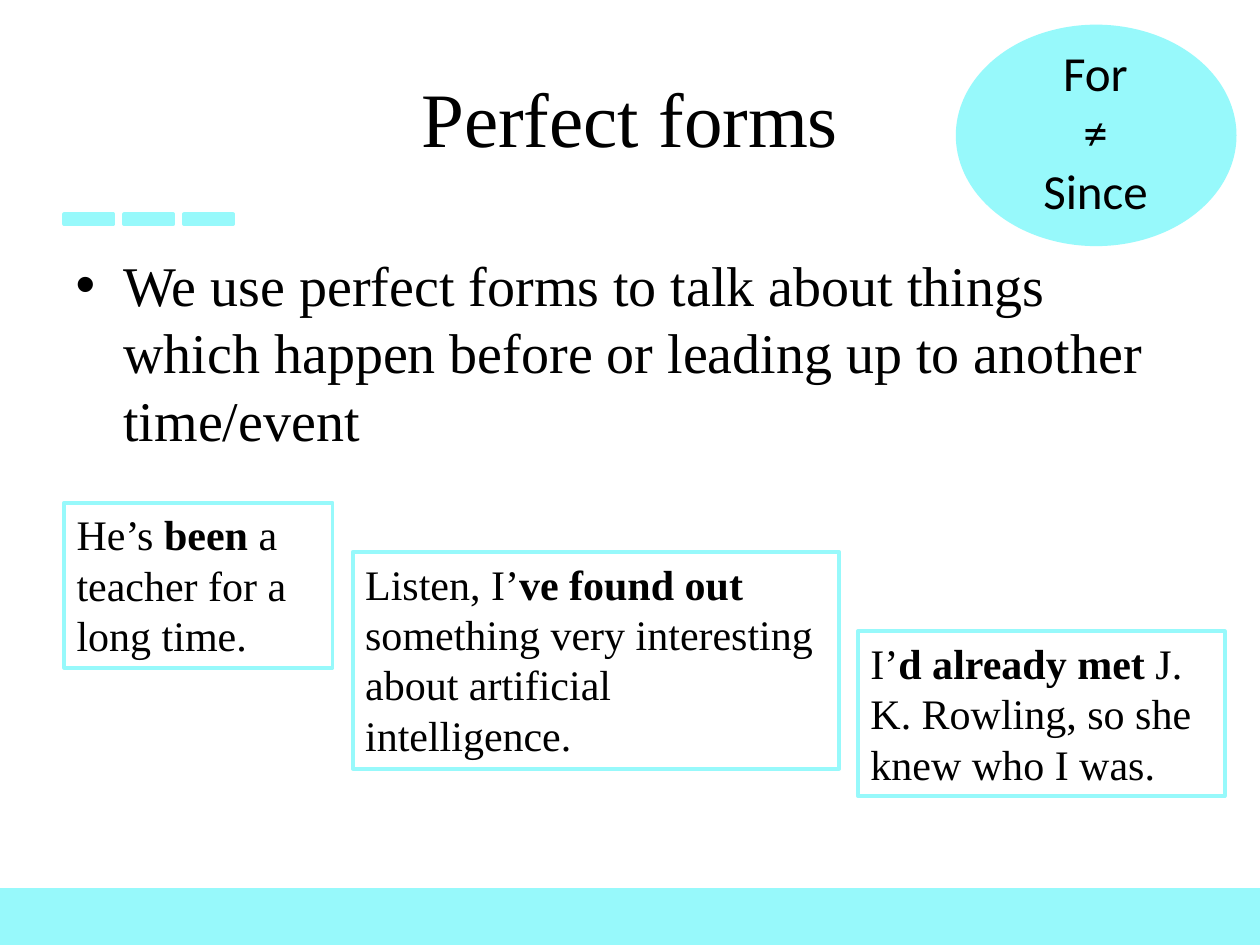
from dataclasses import dataclass

from lxml.etree import SubElement
from pptx import Presentation
from pptx.dml.color import RGBColor
from pptx.enum.shapes import MSO_SHAPE as Preset
from pptx.enum.text import MSO_ANCHOR as Anchor, MSO_AUTO_SIZE as AutoSize, PP_ALIGN as Align
from pptx.oxml.ns import qn
from pptx.shapes.autoshape import Shape
from pptx.slide import Slide
from pptx.text.text import TextFrame
from pptx.util import Inches, Pt

COLORS = {"accent": "97F9FB", "text": "000000"}
SERIF = "Times New Roman"
SANS = "Calibri"


@dataclass
class Area:
    left: float
    top: float
    width: float
    height: float

    def lengths(self) -> list:
        return [Inches(v) for v in (self.left, self.top, self.width, self.height)]


@dataclass
class Example:
    area: Area
    before: str
    verb: str
    after: str


EXAMPLES = [
    Example(Area(2.8, 4.38, 3.86, 1.72), "Listen, I’", "ve found out ",
            "something very interesting about artificial intelligence."),
    Example(Area(0.51, 3.99, 2.13, 1.31), "He’s", " been", " a teacher for a long time."),
    Example(Area(6.81, 5.01, 2.91, 1.31), "I’", "d already met ",
            "J. K. Rowling, so she knew who I was."),
]


def rgb(name: str) -> RGBColor:
    return RGBColor.from_string(COLORS[name])


def write_text(frame: TextFrame, *parts: str, size: float, font: str = SERIF,
               align: Align = Align.LEFT, anchor: Anchor = Anchor.TOP,
               bold_part: int = -1) -> None:
    frame.word_wrap = True
    frame.vertical_anchor = anchor
    para = frame.paragraphs[0]
    para.alignment = align
    for index, part in enumerate(parts):
        for line_index, line in enumerate(part.split("\n")):
            if line_index:
                para.add_line_break()
            span = para.add_run()
            span.text = line
            span.font.size = Pt(size)
            span.font.name = font
            span.font.bold = index == bold_part
            span.font.color.rgb = rgb("text")


def place(shape: Shape, area: Area) -> None:
    shape.left, shape.top, shape.width, shape.height = area.lengths()


def add_panel(page: Slide, area: Area, preset: Preset = Preset.RECTANGLE,
              filled: bool = True, line_width: float = 2) -> Shape:
    panel = page.shapes.add_shape(preset, *area.lengths())
    panel.shadow.inherit = False
    if filled:
        panel.fill.solid()
        panel.fill.fore_color.rgb = rgb("accent")
    else:
        panel.fill.background()
    panel.line.color.rgb = rgb("accent")
    panel.line.width = Pt(line_width)
    return panel


def add_example(page: Slide, example: Example) -> None:
    box = add_panel(page, example.area, filled=False, line_width=2.25)
    write_text(box.text_frame, example.before, example.verb, example.after,
               size=24, bold_part=1)
    box.text_frame.auto_size = AutoSize.SHAPE_TO_FIT_TEXT


def fill_placeholders(page: Slide) -> None:
    title, body = page.shapes.title, page.placeholders[1]
    place(title, Area(0.5, 0.3, 9, 1.25))
    write_text(title.text_frame, "Perfect forms", size=44,
               align=Align.CENTER, anchor=Anchor.MIDDLE)
    place(body, Area(0.5, 1.94, 9, 1.73))
    write_text(body.text_frame,
               "We use perfect forms to talk about things which happen "
               "before or leading up to another time/event", size=32)
    properties = body.text_frame.paragraphs[0]._p.get_or_add_pPr()
    properties.set("marL", str(Inches(0.38)))
    properties.set("indent", str(Inches(-0.38)))
    SubElement(properties, qn("a:buChar")).set("char", "•")


def add_badge(page: Slide) -> None:
    add_panel(page, Area(7.6, 0.21, 2.2, 1.73), Preset.OVAL)
    label = page.shapes.add_textbox(*Area(7.83, 0.29, 1.73, 1.51).lengths())
    write_text(label.text_frame, "For\n≠\nSince", size=28, font=SANS, align=Align.CENTER)
    label.text_frame.auto_size = AutoSize.SHAPE_TO_FIT_TEXT


def main() -> None:
    deck = Presentation()
    deck.slide_width, deck.slide_height = Inches(10), Inches(7.5)
    page = deck.slides.add_slide(deck.slide_layouts[1])
    fill_placeholders(page)
    add_panel(page, Area(0, 7.06, 10, 0.44))
    for index in range(3):
        add_panel(page, Area(0.51 + 0.475 * index, 1.7, 0.39, 0.08))
    for example in EXAMPLES:
        add_example(page, example)
    add_badge(page)
    deck.save("out.pptx")


if __name__ == "__main__":
    main()
